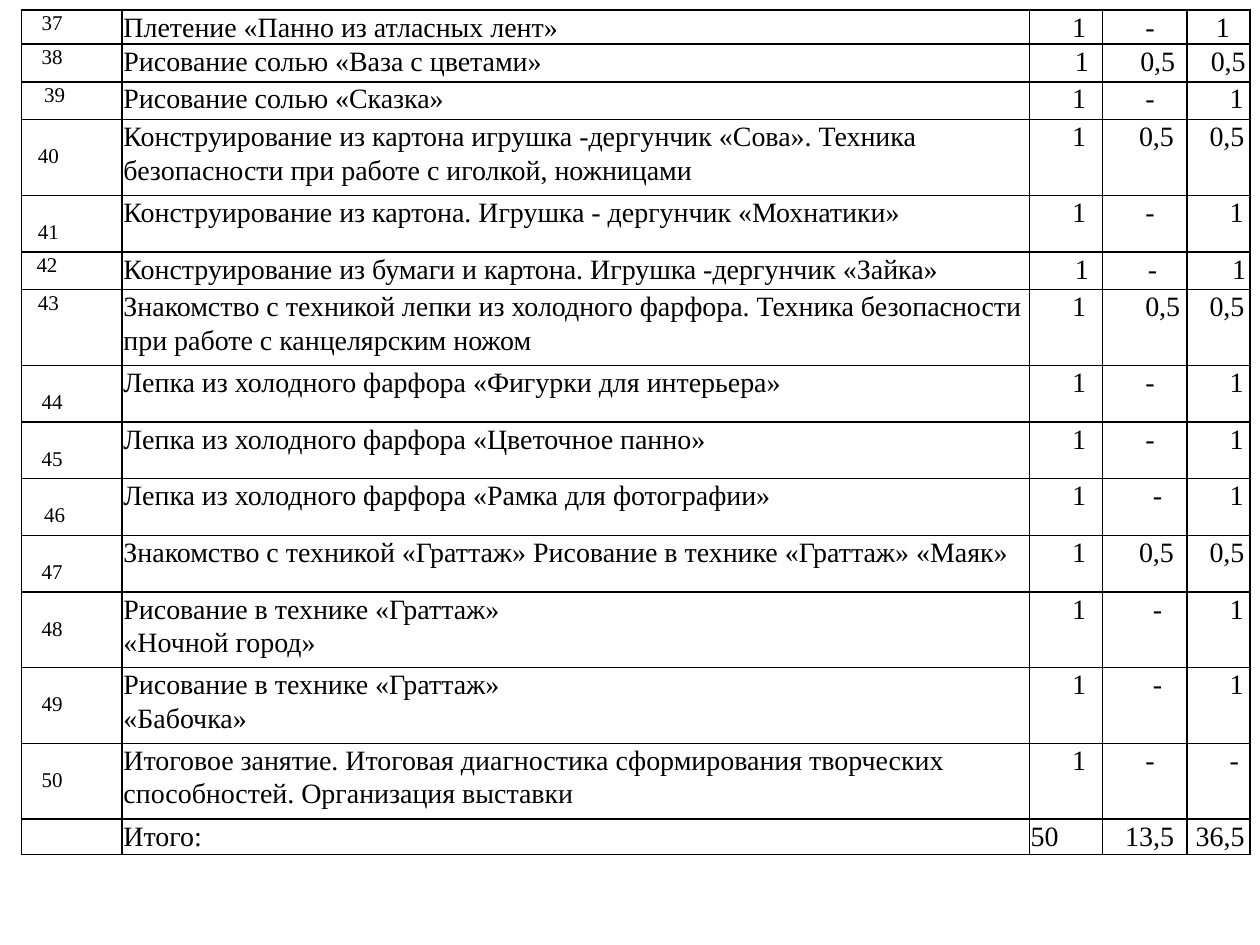
from lxml import etree
from pptx import Presentation, util as u
from pptx.dml.color import RGBColor
from pptx.oxml.ns import qn

COLORS = {"ink": "000000"}
FONT = "Times New Roman"
COLS = [0.8, 7.2, 0.58, 0.67, 0.5]
LINE, LOW, MID, HIGH = 0.27, 0.3, 0.45, 0.6  # row heights
DROP = 0.19  # one line of a row number

# Row height, number drop, then (text, indent) for each column
ROWS = [
    (LINE, 0, ("37", 0.15), ("Плетение «Панно из атласных лент»", 0),
     ("1", 0.33), ("-", 0.33), ("1", 0.22)),
    (LOW, 0, ("38", 0.15), ("Рисование солью «Ваза с цветами»", 0),
     ("1", 0.35), ("0,5", 0.29), ("0,5", 0.18)),
    (LOW, 0, ("39", 0.17), ("Рисование солью «Сказка»", 0),
     ("1", 0.33), ("-", 0.33), ("1", 0.33)),
    (HIGH, DROP, ("40", 0.12),
     ("Конструирование из картона игрушка -дергунчик «Сова». Техника "
      "безопасности при работе с иголкой, ножницами", 0),
     ("1", 0.33), ("0,5", 0.28), ("0,5", 0.17)),
    (MID, DROP, ("41", 0.12),
     ("Конструирование из картона. Игрушка - дергунчик «Мохнатики»", 0),
     ("1", 0.33), ("-", 0.33), ("1", 0.33)),
    (LOW, 0, ("42", 0.11),
     ("Конструирование из бумаги и картона. Игрушка -дергунчик «Зайка»", 0),
     ("1", 0.35), ("-", 0.35), ("1", 0.35)),
    (HIGH, 0, ("43", 0.12),
     ("Знакомство с техникой лепки из холодного фарфора. Техника безопасности "
      "при работе с канцелярским ножом", 0),
     ("1", 0.33), ("0,5", 0.33), ("0,5", 0.17)),
    (MID, DROP, ("44", 0.15), ("Лепка из холодного фарфора «Фигурки для интерьера»", 0),
     ("1", 0.33), ("-", 0.33), ("1", 0.33)),
    (MID, DROP, ("45", 0.15), ("Лепка из холодного фарфора «Цветочное панно»", 0),
     ("1", 0.33), ("-", 0.33), ("1", 0.33)),
    (MID, DROP, ("46", 0.17), ("Лепка из холодного фарфора «Рамка для фотографии»", 0),
     ("1", 0.33), ("-", 0.39), ("1", 0.33)),
    (MID, DROP, ("47", 0.15),
     ("Знакомство с техникой «Граттаж» Рисование в технике «Граттаж» «Маяк»", 0),
     ("1", 0.33), ("0,5", 0.28), ("0,5", 0.17)),
    (HIGH, DROP, ("48", 0.15), ("Рисование в технике «Граттаж»\n«Ночной город»", 0),
     ("1", 0.33), ("-", 0.39), ("1", 0.33)),
    (HIGH, DROP, ("49", 0.15), ("Рисование в технике «Граттаж»\n«Бабочка»", 0),
     ("1", 0.33), ("-", 0.39), ("1", 0.33)),
    (HIGH, DROP, ("50", 0.15),
     ("Итоговое занятие. Итоговая диагностика сформирования творческих "
      "способностей. Организация выставки", 0),
     ("1", 0.33), ("-", 0.33), ("-", 0.33)),
    (LINE, 0, ("", 0), ("Итого:", 0), ("50", 0), ("13,5", 0.17), ("36,5", 0.06)),
]


def write(cell, content, size=16, indent=0, top=0):
    cell.margin_left = cell.margin_right = u.Inches(0.01)
    cell.margin_top, cell.margin_bottom = u.Inches(top), 0
    tf = cell.text_frame
    for i, line in enumerate(content.split("\n")):
        p = tf.add_paragraph() if i else tf.paragraphs[0]
        p.line_spacing = 1.07
        p._p.get_or_add_pPr().set("marL", str(u.Inches(indent)))
        r = p.add_run()
        r.text = line
        r.font.size, r.font.name = u.Pt(size), FONT
        r.font.color.rgb = RGBColor.from_string(COLORS["ink"])


def add_borders(cell):
    props = cell._tc.get_or_add_tcPr()
    for side in ("lnL", "lnR", "lnT", "lnB"):
        ln = etree.SubElement(props, qn(f"a:{side}"), w=str(u.Pt(1)))
        fill = etree.SubElement(ln, qn("a:solidFill"))
        etree.SubElement(fill, qn("a:srgbClr"), val=COLORS["ink"])


prs = Presentation()
prs.slide_width, prs.slide_height = u.Inches(10), u.Inches(7.5)
s = prs.slides.add_slide(prs.slide_layouts[6])

# Lesson plan table
table = s.shapes.add_table(
    len(ROWS), len(COLS), u.Inches(0.17), u.Inches(0.08),
    u.Inches(sum(COLS)), u.Inches(sum(row[0] for row in ROWS))).table
table.first_row = table.horz_banding = False
for column, width in zip(table.columns, COLS):
    column.width = u.Inches(width)

for i, (height, drop, *entries) in enumerate(ROWS):
    table.rows[i].height = u.Inches(height)
    for j, (content, indent) in enumerate(entries):
        cell = table.cell(i, j)
        is_number = j == 0
        write(cell, content, size=12 if is_number else 16,
              indent=indent, top=drop if is_number else 0)
        add_borders(cell)
        cell.fill.background()

prs.save("out.pptx")
